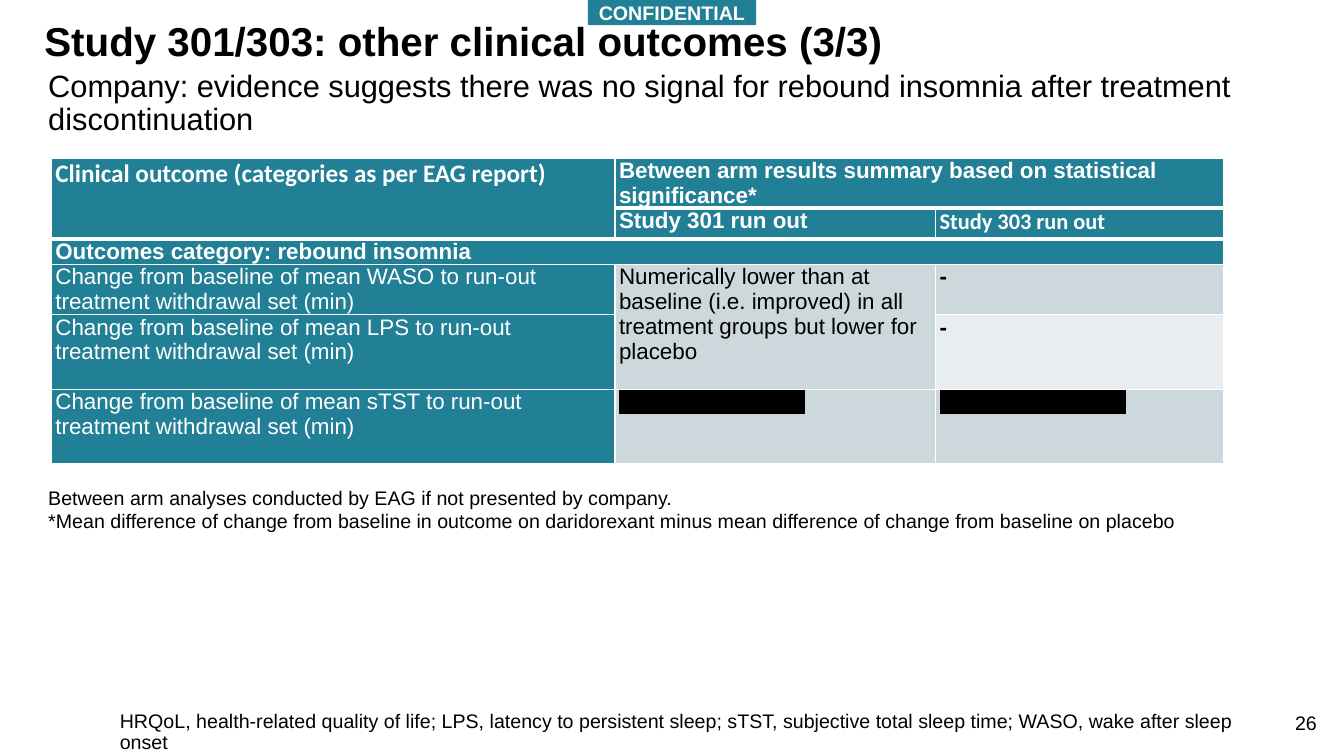
from dataclasses import dataclass
from typing import Optional

from lxml import etree
from pptx import Presentation
from pptx.dml.color import RGBColor
from pptx.enum import shapes, text
from pptx.oxml import ns
from pptx.util import Inches, Pt

COLOURS = {
    "teal": "228096",
    "band": "CDD8DD",
    "light_band": "E8EDEF",
    "white": "FFFFFF",
    "black": "000000",
}
REDACTED = "xxxxxxxxxxxxxxx"
COLUMN_WIDTHS = (5.59, 3.18, 2.86)
ROW_HEIGHTS = (0.49, 0.31, 0.25, 0.5, 0.74, 0.74)
HEADER_ROWS = 2


@dataclass(frozen=True)
class Style:
    size: float = 14
    colour: str = "black"
    bold: bool = False
    font: str = "Arial"
    redacted: bool = False


@dataclass(frozen=True)
class TextBlock:
    left: float
    top: float
    width: float
    height: float
    lines: tuple[str, ...]
    style: Style = Style()
    align: text.PP_ALIGN = text.PP_ALIGN.LEFT
    line_spacing: Optional[float] = None


@dataclass(frozen=True)
class Cell:
    row: int
    column: int
    words: str
    style: Style
    fill: str = "teal"
    row_span: int = 1
    column_span: int = 1


HEADER = Style(16, "white", True)
LABEL = Style(16, "white")
RESULT = Style(16)
BOLD_RESULT = Style(16, bold=True)
REDACTION = Style(16, bold=True, redacted=True)

CELLS = (
    Cell(0, 0, "Clinical outcome (categories as per EAG report)",
         Style(18, "white", True, "Calibri"), row_span=2),
    Cell(0, 1, "Between arm results summary based on statistical significance*",
         HEADER, column_span=2),
    Cell(1, 1, "Study 301 run out", HEADER),
    Cell(1, 2, "Study 303 run out", Style(16, "white", True, "Calibri")),
    Cell(2, 0, "Outcomes category: rebound insomnia", HEADER, column_span=3),
    Cell(3, 0, "Change from baseline of mean WASO to run-out treatment withdrawal set (min)", LABEL),
    Cell(3, 1, "Numerically lower than at baseline (i.e. improved) in all treatment groups "
         "but lower for placebo", RESULT, "band", row_span=2),
    Cell(3, 2, "-", BOLD_RESULT, "band"),
    Cell(4, 0, "Change from baseline of mean LPS to run-out treatment withdrawal set (min)", LABEL),
    Cell(4, 2, "-", BOLD_RESULT, "light_band"),
    Cell(5, 0, "Change from baseline of mean sTST to run-out treatment withdrawal set (min)", LABEL),
    Cell(5, 1, REDACTED, REDACTION, "band"),
    Cell(5, 2, REDACTED, REDACTION, "band"),
)

TEXT_BLOCKS = (
    TextBlock(0.38, 0.65, 12.48, 0.81,
              ("Company: evidence suggests there was no signal for rebound insomnia after "
               "treatment discontinuation",), Style(22), line_spacing=0.9),
    TextBlock(0.38, 4.77, 12.3, 0.57,
              ("Between arm analyses conducted by EAG if not presented by company.",
               "*Mean difference of change from baseline in outcome on daridorexant minus "
               "mean difference of change from baseline on placebo")),
    TextBlock(1.09, 7.01, 11.38, 0.4,
              ("HRQoL, health-related quality of life; LPS, latency to persistent sleep; "
               "sTST, subjective total sleep time; WASO, wake after sleep onset",),
              line_spacing=0.9),
    TextBlock(12.65, 7, 0.51, 0.4, ("26",), align=text.PP_ALIGN.RIGHT),
)


def rgb(name: str) -> RGBColor:
    return RGBColor.from_string(COLOURS[name])


def add_run(paragraph, words: str, style: Style) -> None:
    run = paragraph.add_run()
    run.text = words
    run.font.size = Pt(style.size)
    run.font.bold = style.bold
    run.font.name = style.font
    run.font.color.rgb = rgb(style.colour)
    if style.redacted:
        highlight = etree.Element(ns.qn("a:highlight"))
        etree.SubElement(highlight, ns.qn("a:srgbClr"), val=COLOURS["black"])
        run.font._element.find(ns.qn("a:solidFill")).addnext(highlight)


def add_text_block(slide, block: TextBlock) -> None:
    box = slide.shapes.add_textbox(
        Inches(block.left), Inches(block.top), Inches(block.width), Inches(block.height))
    frame = box.text_frame
    frame.word_wrap = True
    for index, line in enumerate(block.lines):
        paragraph = frame.add_paragraph() if index else frame.paragraphs[0]
        paragraph.alignment = block.align
        paragraph.line_spacing = block.line_spacing
        add_run(paragraph, line, block.style)


def set_borders(cell, row: int) -> None:
    """Draw white borders, thicker under the header rows."""
    properties = cell._tc.get_or_add_tcPr()
    top = 3 if 0 < row <= HEADER_ROWS else 1
    bottom = 3 if row < HEADER_ROWS else 1
    edges = {"a:lnL": 1, "a:lnR": 1, "a:lnT": top, "a:lnB": bottom}
    for position, (tag, width) in enumerate(edges.items()):
        line = etree.Element(ns.qn(tag), w=str(Pt(width)))
        fill = etree.SubElement(line, ns.qn("a:solidFill"))
        etree.SubElement(fill, ns.qn("a:srgbClr"), val=COLOURS["white"])
        properties.insert(position, line)


def add_outcome_table(slide) -> None:
    table = slide.shapes.add_table(
        len(ROW_HEIGHTS), len(COLUMN_WIDTHS), Inches(0.51), Inches(1.57),
        Inches(sum(COLUMN_WIDTHS)), Inches(sum(ROW_HEIGHTS))).table
    table.first_row = table.horz_banding = False
    for column, width in zip(table.columns, COLUMN_WIDTHS):
        column.width = Inches(width)
    for row, height in zip(table.rows, ROW_HEIGHTS):
        row.height = Inches(height)

    for item in CELLS:
        last_row = item.row + item.row_span - 1
        last_column = item.column + item.column_span - 1
        cell = table.cell(item.row, item.column)
        if (last_row, last_column) != (item.row, item.column):
            cell.merge(table.cell(last_row, last_column))
        add_run(cell.text_frame.paragraphs[0], item.words, item.style)
        for row in range(item.row, last_row + 1):
            for column in range(item.column, last_column + 1):
                part = table.cell(row, column)
                part.margin_left = part.margin_right = Inches(0.04)
                part.margin_top = part.margin_bottom = 0
                part.fill.solid()
                part.fill.fore_color.rgb = rgb(item.fill)
                set_borders(part, row)


def format_title(slide) -> None:
    title = slide.shapes.title
    title.left, title.top = Inches(0.34), Inches(0.18)
    title.width, title.height = Inches(12.3), Inches(0.5)
    frame = title.text_frame
    frame.auto_size = text.MSO_AUTO_SIZE.NONE
    frame.vertical_anchor = text.MSO_ANCHOR.MIDDLE
    paragraph = frame.paragraphs[0]
    paragraph.alignment = text.PP_ALIGN.LEFT
    paragraph.line_spacing = 0.9
    add_run(paragraph, "Study 301/303: other clinical outcomes (3/3)", Style(28.8, bold=True))


def add_confidential_marker(slide) -> None:
    marker = slide.shapes.add_shape(
        shapes.MSO_SHAPE.RECTANGLE, Inches(5.83), 0, Inches(1.67), Inches(0.25))
    marker.shadow.inherit = False
    marker.fill.solid()
    marker.fill.fore_color.rgb = rgb("teal")
    marker.line.fill.background()
    marker.text_frame.vertical_anchor = text.MSO_ANCHOR.MIDDLE
    paragraph = marker.text_frame.paragraphs[0]
    paragraph.alignment = text.PP_ALIGN.CENTER
    add_run(paragraph, "CONFIDENTIAL", Style(14, "white", True))


def main() -> None:
    presentation = Presentation()
    presentation.slide_width, presentation.slide_height = Inches(13.33), Inches(7.5)
    slide = presentation.slides.add_slide(presentation.slide_layouts[5])
    format_title(slide)
    add_outcome_table(slide)
    for block in TEXT_BLOCKS:
        add_text_block(slide, block)
    add_confidential_marker(slide)
    presentation.save("out.pptx")


if __name__ == "__main__":
    main()
